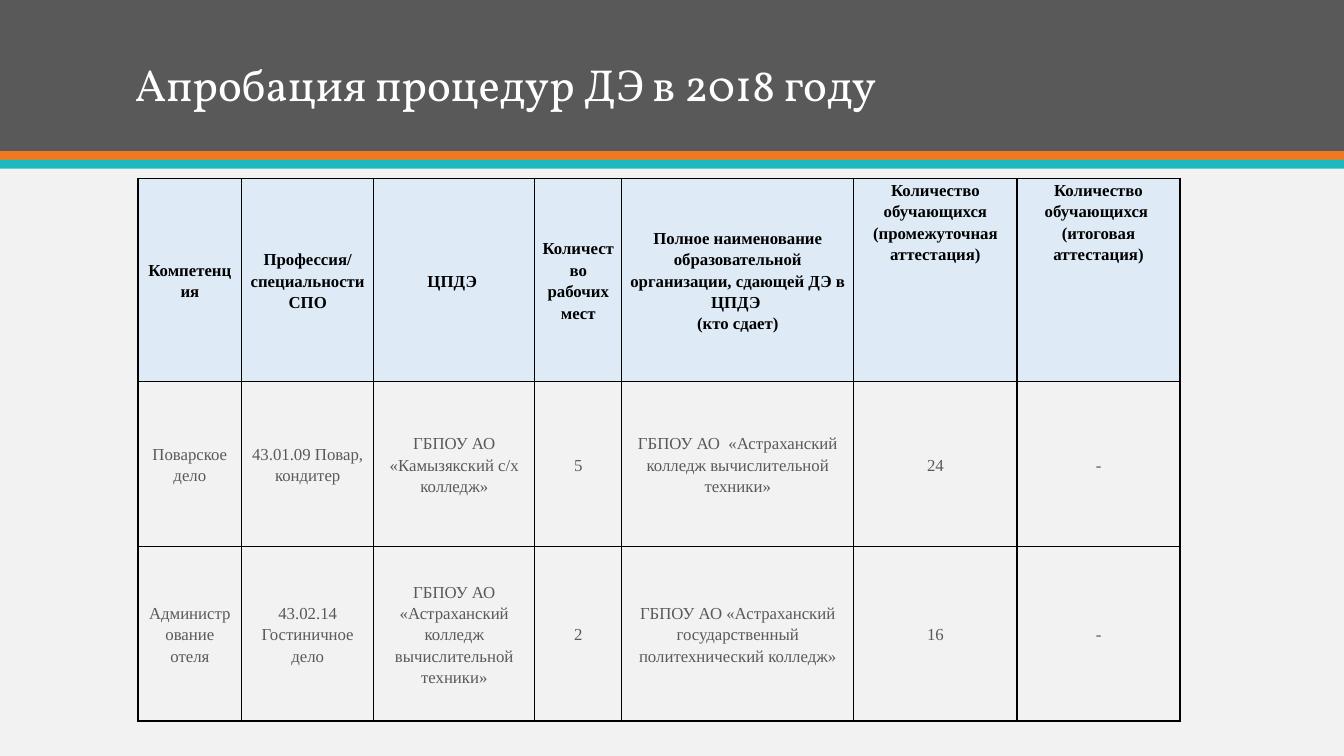
from dataclasses import dataclass

from lxml import etree
from pptx import Presentation
from pptx.dml.color import RGBColor
from pptx.enum.shapes import MSO_SHAPE
from pptx.enum.text import MSO_ANCHOR, PP_ALIGN
from pptx.oxml.ns import qn
from pptx.util import Cm, Pt

RECTANGLE = MSO_SHAPE.RECTANGLE
TOP, MIDDLE, BOTTOM = MSO_ANCHOR.TOP, MSO_ANCHOR.MIDDLE, MSO_ANCHOR.BOTTOM
CENTER = PP_ALIGN.CENTER


@dataclass(frozen=True)
class Theme:
    background: str = "F2F2F2"
    banner: str = "595959"
    orange: str = "EF7920"
    teal: str = "1EB8C1"
    title: str = "FFFFFF"
    header_fill: str = "DEEBF6"
    header_text: str = "000000"
    body_text: str = "595959"
    border: str = "000000"
    title_font: str = "Vollkorn"
    table_font: str = "Times New Roman"
    title_size: int = 32
    table_size: int = 12
    border_width: int = 1


THEME = Theme()
SLIDE_WIDTH, SLIDE_HEIGHT = 33.87, 19.05
BANNER_HEIGHT, STRIPE_HEIGHT = 3.81, 0.22
TITLE = "Апробация процедур ДЭ в 2018 году"
COLUMN_WIDTHS = (2.61, 3.33, 4.06, 2.19, 5.85, 4.11, 4.11)
ROW_HEIGHTS = (5.11, 4.17, 4.39)
TOP_ANCHORED_HEADERS = (5, 6)
ROWS = (
    (
        "Компетенция",
        "Профессия/ специальности СПО",
        "ЦПДЭ ",
        "Количество рабочих мест",
        "Полное наименование образовательной организации, сдающей ДЭ в ЦПДЭ \v(кто сдает)",
        "Количество обучающихся (промежуточная аттестация)",
        "Количество обучающихся \n(итоговая аттестация)",
    ),
    (
        "Поварское дело",
        "43.01.09 Повар, кондитер",
        "ГБПОУ АО «Камызякский с/х колледж»",
        "5",
        "ГБПОУ АО  «Астраханский колледж вычислительной техники»",
        "24",
        "-",
    ),
    (
        "Администрование отеля",
        "43.02.14 Гостиничное дело",
        "ГБПОУ АО «Астраханский колледж вычислительной техники»",
        "2",
        "ГБПОУ АО «Астраханский государственный политехнический колледж»",
        "16",
        "-",
    ),
)


def apply_format(target, values):
    for name, value in values.items():
        setattr(target, name, value)


def format_paragraph(paragraph, color, font_values, paragraph_values):
    apply_format(paragraph, paragraph_values)
    apply_format(paragraph.font, font_values)
    paragraph.font.color.rgb = RGBColor.from_string(color)


def add_band(slide, left, top, width, height, color):
    band = slide.shapes.add_shape(RECTANGLE, Cm(left), Cm(top), Cm(width), Cm(height))
    band.shadow.inherit = False
    band.fill.solid()
    band.fill.fore_color.rgb = RGBColor.from_string(color)
    band.line.fill.background()


def add_banner(slide, left, top, width):
    """Dark banner with two stripes under it and the title inside."""
    bands = (
        (BANNER_HEIGHT, THEME.banner),
        (STRIPE_HEIGHT, THEME.orange),
        (STRIPE_HEIGHT, THEME.teal),
    )
    band_top = top
    for height, color in bands:
        add_band(slide, left, band_top, width, height, color)
        band_top += height

    title = slide.shapes.add_textbox(Cm(left + 3.15), Cm(top + 0.86), Cm(26.67), Cm(2.06))
    frame = title.text_frame
    apply_format(frame, {"word_wrap": True, "vertical_anchor": BOTTOM, "text": TITLE})
    format_paragraph(
        frame.paragraphs[0],
        THEME.title,
        {"name": THEME.title_font, "size": Pt(THEME.title_size)},
        {"line_spacing": 0.9},
    )


def add_borders(cell):
    properties = cell._tc.get_or_add_tcPr()
    for side in ("a:lnL", "a:lnR", "a:lnT", "a:lnB"):
        line = etree.SubElement(properties, qn(side), w=str(Pt(THEME.border_width)))
        fill = etree.SubElement(line, qn("a:solidFill"))
        etree.SubElement(fill, qn("a:srgbClr"), val=THEME.border)


def fill_cell(cell, text, is_header, anchor):
    apply_format(cell, {
        "text": text,
        "vertical_anchor": anchor,
        "margin_left": Cm(0.18),
        "margin_right": Cm(0.18),
        "margin_top": 0,
        "margin_bottom": 0,
    })
    add_borders(cell)
    if is_header:
        cell.fill.solid()
        cell.fill.fore_color.rgb = RGBColor.from_string(THEME.header_fill)
    else:
        cell.fill.background()
    for paragraph in cell.text_frame.paragraphs:
        format_paragraph(
            paragraph,
            THEME.header_text if is_header else THEME.body_text,
            {"name": THEME.table_font, "size": Pt(THEME.table_size), "bold": is_header},
            {"alignment": CENTER, "line_spacing": 1.15},
        )


def add_exam_table(slide, left, top):
    table = slide.shapes.add_table(
        len(ROWS), len(COLUMN_WIDTHS), Cm(left), Cm(top),
        Cm(sum(COLUMN_WIDTHS)), Cm(sum(ROW_HEIGHTS)),
    ).table
    apply_format(table, {"first_row": False, "horz_banding": False})
    for column, width in zip(table.columns, COLUMN_WIDTHS):
        column.width = Cm(width)
    for row, height in zip(table.rows, ROW_HEIGHTS):
        row.height = Cm(height)
    for row_index, texts in enumerate(ROWS):
        is_header = row_index == 0
        for column_index, text in enumerate(texts):
            at_top = is_header and column_index in TOP_ANCHORED_HEADERS
            cell = table.cell(row_index, column_index)
            fill_cell(cell, text, is_header, TOP if at_top else MIDDLE)


def main():
    presentation = Presentation()
    presentation.slide_width = Cm(SLIDE_WIDTH)
    presentation.slide_height = Cm(SLIDE_HEIGHT)
    slide = presentation.slides.add_slide(presentation.slide_layouts[6])
    slide.background.fill.solid()
    slide.background.fill.fore_color.rgb = RGBColor.from_string(THEME.background)
    add_banner(slide, 0, 0, SLIDE_WIDTH)
    add_exam_table(slide, 3.48, 4.5)
    presentation.save("out.pptx")


if __name__ == "__main__":
    main()
